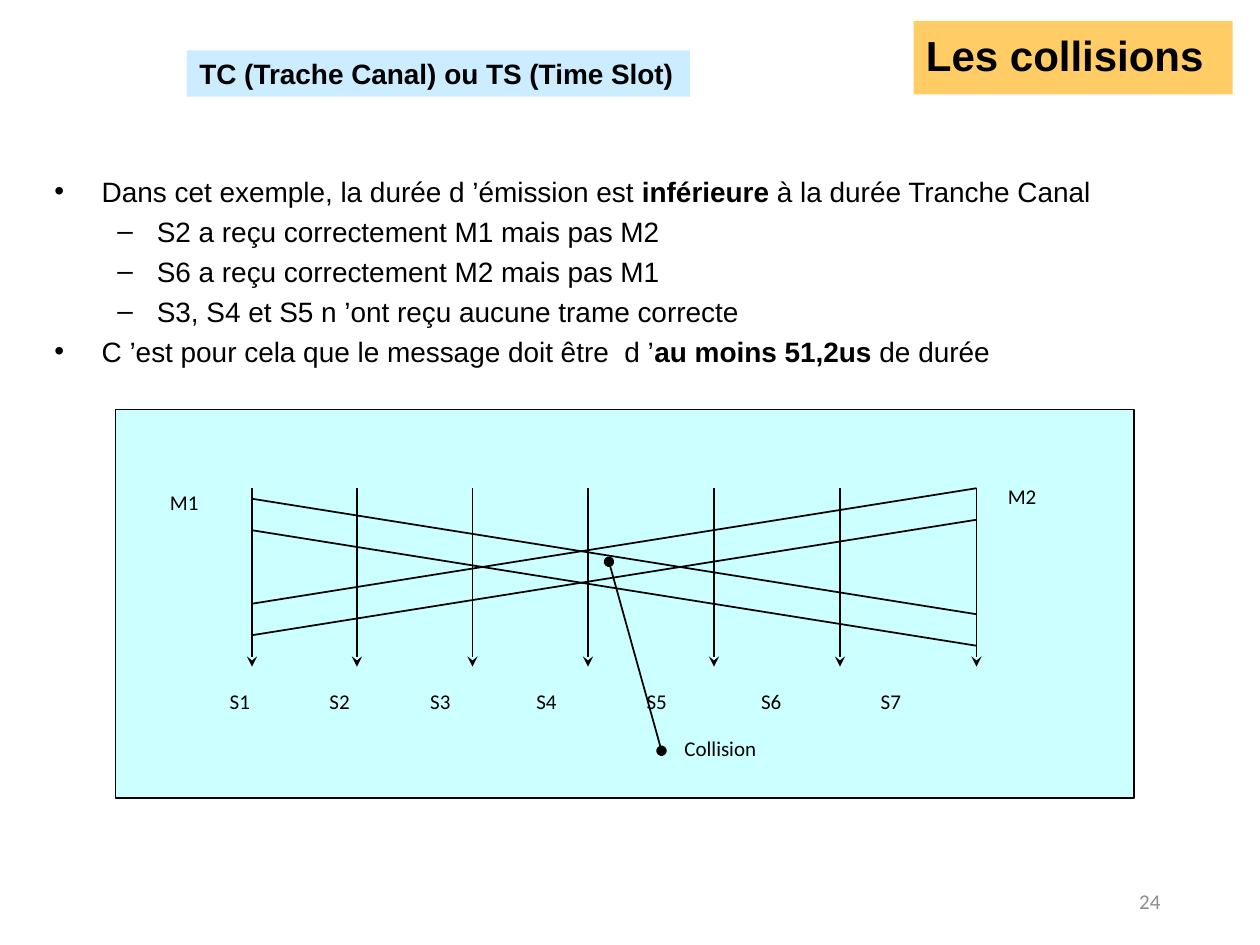
from dataclasses import dataclass

from lxml.etree import SubElement as Sub
from pptx import Presentation
from pptx.dml.color import RGBColor as Rgb
from pptx.enum.shapes import MSO_CONNECTOR as Conn, MSO_SHAPE as Geo
from pptx.enum.text import MSO_ANCHOR as Anchor, PP_ALIGN as Align
from pptx.oxml.ns import qn
from pptx.util import Inches, Pt


@dataclass(frozen=True)
class Theme:
    """Colours, fonts and type sizes of the slide."""
    ink: str = "000000"
    grey: str = "8C8C8C"
    gold: str = "FFCC66"
    sky: str = "CCECFF"
    aqua: str = "CCFFFF"
    head: str = "Arial"
    note: str = "Calibri"
    big: int = 24
    mid: int = 16
    small: int = 12


@dataclass(frozen=True)
class Box:
    """A region counted in grid columns and rows."""
    x: float
    y: float
    w: float
    h: float

    def sub(self, x, y, w, h):
        """Return a region placed from this one's corner."""
        return Box(self.x + x, self.y + y, w, h)

    def emu(self):
        """Return the four lengths for python-pptx."""
        return [unit(v) for v in (self.x, self.y, self.w, self.h)]


T = Theme()
COLS, ROWS, CELL = 120, 90, 1 / 12
POSTS = (13, 23, 34, 45, 57, 69, 82)
STOPS = (0.9, 10.4, 20, 30.1, 40.6, 51.5, 62.9)
BODY = (
    (0, (("Dans cet exemple, la durée d ’émission est ", False),
         ("inférieure", True), (" à la durée Tranche Canal", False))),
    (1, (("S2 a reçu correctement M1 mais pas M2", False),)),
    (1, (("S6 a reçu correctement M2 mais pas M1", False),)),
    (1, (("S3, S4 et S5 n ’ont reçu aucune trame correcte", False),)),
    (0, (("C ’est pour cela que le message doit être  d ’", False),
         ("au moins 51,2us", True), (" de durée", False))),
)


def unit(n):
    """Turn grid cells into a length."""
    return Inches(n * CELL)


def add_run(para, text, size, font, bold=False, tint=T.ink):
    """Add one styled run to a paragraph."""
    run = para.add_run()
    run.text = text
    run.font.size, run.font.name, run.font.bold = Pt(size), font, bold
    run.font.color.rgb = Rgb.from_string(tint)


def panel(slide, box, fill, edge=None):
    """Draw a filled rectangle, with an outline if asked."""
    rect = slide.shapes.add_shape(Geo.RECTANGLE, *box.emu())
    rect.shadow.inherit = False
    rect.fill.solid()
    rect.fill.fore_color.rgb = Rgb.from_string(fill)
    if edge:
        rect.line.color.rgb = Rgb.from_string(edge)
        rect.line.width = Pt(0.75)
    else:
        rect.line.fill.background()
    return rect


def banner(slide, box, text, fill, size, wrap=True):
    """Draw a coloured heading strip."""
    frame = panel(slide, box, fill).text_frame
    frame.word_wrap = wrap
    frame.vertical_anchor = Anchor.MIDDLE
    para = frame.paragraphs[0]
    para.alignment = Align.LEFT
    para.line_spacing = 0.9 if wrap else 1.0
    add_run(para, text, size, T.head, True)


def label(slide, box, text, tint=T.ink, align=Align.LEFT):
    """Write a small caption and return its paragraph."""
    frame = slide.shapes.add_textbox(*box.emu()).text_frame
    frame.word_wrap = True
    para = frame.paragraphs[0]
    para.alignment = align
    add_run(para, text, T.small, T.note, tint=tint)
    return para


def bullets(slide, box, items):
    """Write the two-level bullet list."""
    frame = slide.shapes.add_textbox(*box.emu()).text_frame
    frame.word_wrap = True
    for i, (level, runs) in enumerate(items):
        para = frame.add_paragraph() if i else frame.paragraphs[0]
        para.level = level
        para.space_before = Pt(3.7)
        left, hang, mark = ((4.5, 4.5, "•"), (9.75, 3.75, "–"))[level]
        props = para._p.get_or_add_pPr()
        props.set("marL", str(unit(left)))
        props.set("indent", str(-unit(hang)))
        Sub(props, qn("a:buFont"), typeface=T.head)
        Sub(props, qn("a:buChar"), char=mark)
        for text, bold in runs:
            add_run(para, text, T.mid, T.head, bold)


def line(slide, box, start, end, **tips):
    """Draw a line inside a region, with optional end marks."""
    ends = [unit(v) for x, y in (start, end) for v in (box.x + x, box.y + y)]
    conn = slide.shapes.add_connector(Conn.STRAIGHT, *ends)
    conn.line.width = Pt(1)
    conn.line.color.rgb = Rgb.from_string(T.ink)
    stroke = conn.line._get_or_add_ln()
    for tip, kind in tips.items():
        Sub(stroke, qn(f"a:{tip}"), type=kind)
    Sub(conn._element.spPr, qn("a:effectLst"))


def names(slide, box):
    """Write the station names on tab stops."""
    text = "".join(f"\tS{i}" for i in range(1, len(STOPS) + 1))
    para = label(slide, box, text)
    tabs = Sub(para._p.get_or_add_pPr(), qn("a:tabLst"))
    for stop in STOPS:
        Sub(tabs, qn("a:tab"), pos=str(unit(stop)), algn="l")


def diagram(slide, box):
    """Draw the stations, both messages and their collision."""
    panel(slide, box, T.aqua, T.ink)
    for x in POSTS:
        line(slide, box, (x, 7.5), (x, 24.5), tailEnd="stealth")
    for top, drop in ((8.5, 11), (11.5, 11), (18.5, -11), (21.5, -11)):
        line(slide, box, (POSTS[0], top), (POSTS[-1], top + drop))
    names(slide, box.sub(8.8, 26, 74.2, 3.6))
    label(slide, box.sub(4, 7, 7, 3.6), "M1")
    label(slide, box.sub(83.8, 6.5, 6.2, 3.6), "M2")
    label(slide, box.sub(53, 30.5, 10, 3.6), "Collision")
    line(slide, box, (47, 14.5), (52, 32.5), headEnd="oval", tailEnd="oval")


def main():
    """Build and save the slide."""
    deck = Presentation()
    deck.slide_width, deck.slide_height = unit(COLS), unit(ROWS)
    slide = deck.slides.add_slide(deck.slide_layouts[6])
    page = Box(0, 0, COLS, ROWS)
    label(slide, page.sub(84.7, 84, 27, 3.6), "24", T.grey, Align.RIGHT)
    diagram(slide, page.sub(11, 39, 97, 37))
    banner(slide, page.sub(87, 2, 30.4, 7), "Les collisions", T.gold, T.big)
    banner(slide, page.sub(17.8, 4.8, 47.9, 4.4),
           "TC (Trache Canal) ou TS (Time Slot)", T.sky, T.mid, False)
    bullets(slide, page.sub(4, 16, 112, 20), BODY)
    deck.save("out.pptx")


if __name__ == "__main__":
    main()
